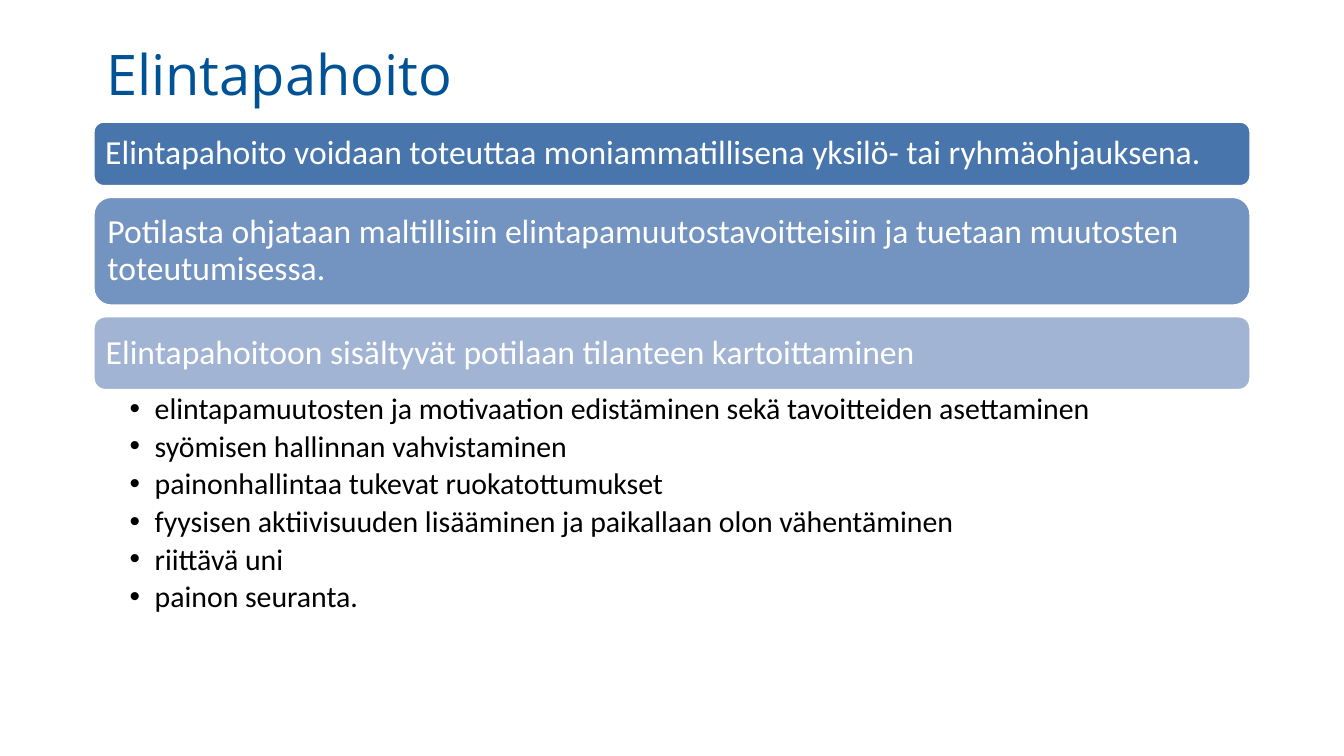
from dataclasses import dataclass

import pptx
import pptx.dml.color
import pptx.enum.shapes
import pptx.enum.text
import pptx.oxml
import pptx.oxml.ns
import pptx.util

Pt = pptx.util.Pt
Align = pptx.enum.text.PP_ALIGN
Anchor = pptx.enum.text.MSO_ANCHOR


@dataclass(frozen=True)
class Theme:
    head: str = "005296"
    light: str = "FFFFFF"
    dark: str = "000000"
    head_font: str = "Open Sans"
    font: str = "Calibri"
    head_size: float = 30
    bar_size: float = 18
    list_size: float = 16


@dataclass(frozen=True)
class Bar:
    text: str
    height: float
    fill: str


THEME = Theme()
LEFT, WIDTH = 49.7, 620.6
TOP, GAP = 64.8, 5
INDENT = 13.5

BARS = [
    Bar("Elintapahoito voidaan toteuttaa moniammatillisena yksilö- tai ryhmäohjauksena.", 35.3, "4875AC"),
    Bar("Potilasta ohjataan maltillisiin elintapamuutostavoitteisiin ja tuetaan muutosten toteutumisessa.", 59, "7393C1"),
    Bar("Elintapahoitoon sisältyvät potilaan tilanteen kartoittaminen", 40.3, "A2B4D4"),
]
ITEMS = [
    "elintapamuutosten ja motivaation edistäminen sekä tavoitteiden asettaminen",
    "syömisen hallinnan vahvistaminen",
    "painonhallintaa tukevat ruokatottumukset",
    "fyysisen aktiivisuuden lisääminen ja paikallaan olon vähentäminen",
    "riittävä uni",
    "painon seuranta.",
]


def color(code: str) -> pptx.dml.color.RGBColor:
    return pptx.dml.color.RGBColor.from_string(code)


def style(para, font: str, size: float, code: str) -> None:
    para.alignment = Align.LEFT
    for run in para.runs:
        run.font.name = font
        run.font.size = Pt(size)
        run.font.color.rgb = color(code)


def inset(frame, left: float, top: float, right: float, base: float) -> None:
    frame.word_wrap = True
    frame.margin_left, frame.margin_top = Pt(left), Pt(top)
    frame.margin_right, frame.margin_bottom = Pt(right), Pt(base)


def add_title(slide, text: str) -> None:
    title = slide.shapes.title
    title.left, title.top = Pt(LEFT), Pt(17.3)
    title.width, title.height = Pt(WIDTH), Pt(44)
    frame = title.text_frame
    frame.text = text
    frame.auto_size = pptx.enum.text.MSO_AUTO_SIZE.NONE
    frame.vertical_anchor = Anchor.MIDDLE
    style(frame.paragraphs[0], THEME.head_font, THEME.head_size, THEME.head)


def add_bar(slide, bar: Bar, top: float) -> None:
    kind = pptx.enum.shapes.MSO_SHAPE.ROUNDED_RECTANGLE
    shape = slide.shapes.add_shape(kind, Pt(LEFT), Pt(top), Pt(WIDTH), Pt(bar.height))
    shape.shadow.inherit = False
    shape.fill.solid()
    shape.fill.fore_color.rgb = color(bar.fill)
    shape.line.color.rgb = color(THEME.light)
    shape.line.width = Pt(2)
    frame = shape.text_frame
    inset(frame, 5, 5, 5, 5)
    frame.vertical_anchor = Anchor.MIDDLE
    frame.text = bar.text
    frame.paragraphs[0].line_spacing = 0.9
    style(frame.paragraphs[0], THEME.font, THEME.bar_size, THEME.light)


def add_bullet(para) -> None:
    props = para._p.get_or_add_pPr()
    props.set("marL", str(Pt(INDENT)))
    props.set("indent", str(-Pt(INDENT)))
    space = pptx.oxml.ns.nsdecls("a")
    props.append(pptx.oxml.parse_xml(f'<a:buFont {space} typeface="Arial"/>'))
    props.append(pptx.oxml.parse_xml(f'<a:buChar {space} char="•"/>'))


def add_list(slide, items: list[str], top: float) -> None:
    box = slide.shapes.add_textbox(Pt(LEFT), Pt(top), Pt(WIDTH), Pt(129))
    frame = box.text_frame
    inset(frame, 19.7, 1.6, 8.9, 1.6)
    frame.text = "\n".join(items)
    for para in frame.paragraphs:
        add_bullet(para)
        para.line_spacing = 0.9
        para.space_after = Pt(2.9)
        style(para, THEME.font, THEME.list_size, THEME.dark)


def main() -> None:
    deck = pptx.Presentation()
    deck.slide_width, deck.slide_height = Pt(720), Pt(405)
    slide = deck.slides.add_slide(deck.slide_layouts[5])
    add_title(slide, "Elintapahoito")
    top = TOP
    for bar in BARS:
        add_bar(slide, bar, top)
        top += bar.height + GAP
    add_list(slide, ITEMS, top - GAP)
    deck.save("out.pptx")


if __name__ == "__main__":
    main()
